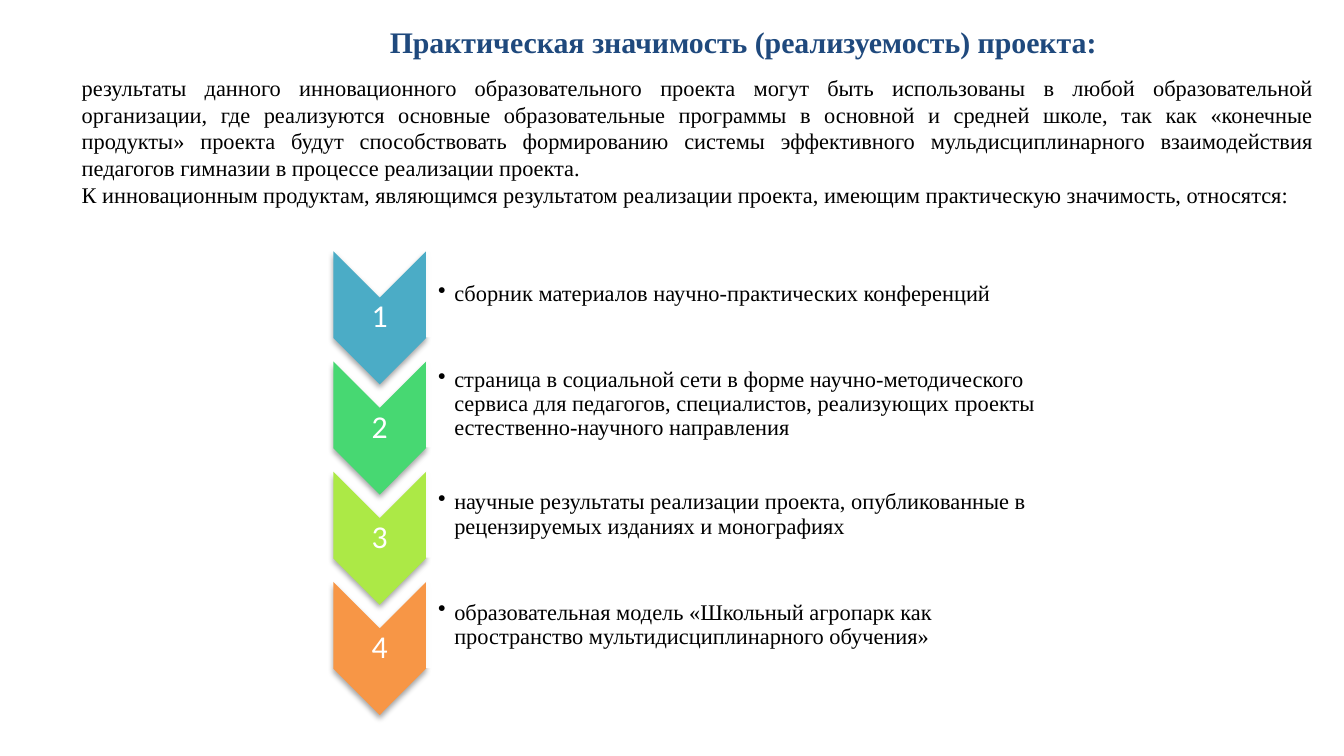
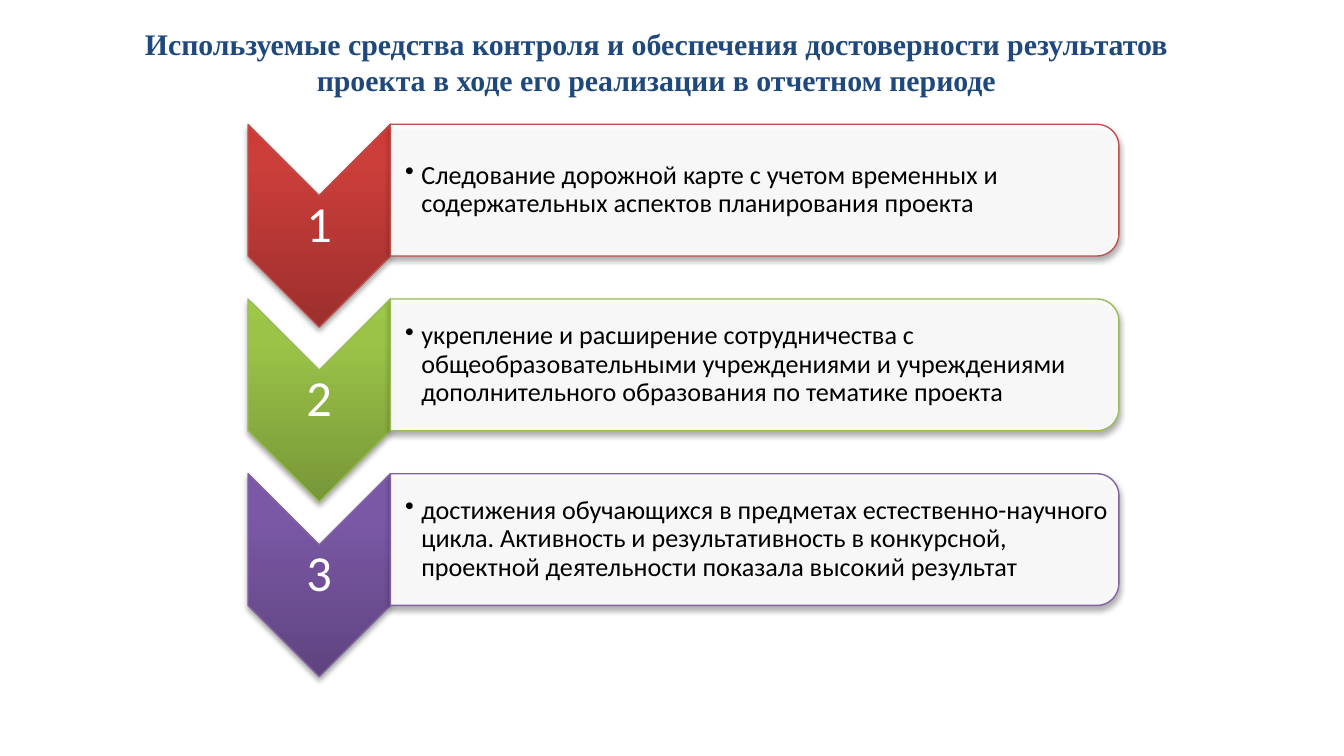
from dataclasses import dataclass
from typing import Any, NamedTuple, Optional

from lxml import etree
from pptx import Presentation
from pptx import util as u
from pptx.dml.color import RGBColor
from pptx.enum import shapes, text
from pptx.oxml.ns import qn

SLIDE_W, SLIDE_H = u.Inches(10), u.Inches(5.625)
CORNER_INSET = 0.0488
TITLE_ONLY = 5


@dataclass(frozen=True)
class Theme:
    """Colours, fonts and type sizes of the deck."""
    heading: str = "1F497D"
    ink: str = "000000"
    paper: str = "FFFFFF"
    serif: str = "Times New Roman"
    sans: str = "Calibri"
    title_size: float = 16
    gap_size: float = 18
    body_size: float = 12
    outline: float = 0.75
    panel_opacity: int = 90
    shadow_opacity: int = 35


THEME = Theme()


class Box(NamedTuple):
    """A frame in hundredths of the slide's width and height."""
    left: float
    top: float
    width: float
    height: float

    def emu(self) -> tuple[int, int, int, int]:
        """Return the frame in EMU."""
        return (int(self.left * SLIDE_W / 100), int(self.top * SLIDE_H / 100),
                int(self.width * SLIDE_W / 100), int(self.height * SLIDE_H / 100))


class Type(NamedTuple):
    """A character style."""
    name: str
    size: float
    color: str
    bold: bool = False


class Step(NamedTuple):
    """One numbered step; shades run from the bottom to the top of its arrow."""
    wording: str
    color: str
    shades: tuple[str, ...] = ()


@dataclass(frozen=True)
class Ladder:
    """Proportions and type of a column of numbered steps."""
    arrow: Box
    panel_width: float
    panel_height: float
    pitch: float
    number: Type
    label: Type
    number_inset: float
    label_inset: float
    outlined: bool


@dataclass(frozen=True)
class Page:
    """The content of one slide."""
    title_box: Box
    title: tuple[tuple[str, Type], ...]
    title_align: Any
    ladder: Ladder
    steps: tuple[Step, ...]
    intro_box: Optional[Box] = None
    intro: tuple[str, ...] = ()


HEADING = Type(THEME.serif, THEME.title_size, THEME.heading, True)
HEADING_GAP = Type(THEME.sans, THEME.gap_size, THEME.ink)
BODY = Type(THEME.serif, THEME.body_size, THEME.ink)

PAGES = (
    Page(
        Box(28, 1.78, 69.1, 7.11),
        (("Практическая", HEADING), (" ", HEADING_GAP),
         ("значимость (реализуемость) проекта:", HEADING)),
        text.PP_ALIGN.LEFT,
        Ladder(Box(24.8, 33.24, 6.9, 17.6), 47.4, 11.38, 14.58,
               Type(THEME.sans, 17, THEME.paper), BODY, 0.01, 0.09, False),
        (Step("сборник материалов научно-практических конференций", "4BACC6"),
         Step("страница в социальной сети в форме научно-методического сервиса для "
              "педагогов, специалистов, реализующих проекты естественно-научного "
              "направления", "47D872"),
         Step("научные результаты реализации проекта, опубликованные в рецензируемых "
              "изданиях и монографиях", "ACE946"),
         Step("образовательная модель «Школьный агропарк как пространство "
              "мультидисциплинарного обучения»", "F79646")),
        Box(5.1, 8.89, 93.7, 19.73),
        ("результаты данного инновационного образовательного проекта могут быть "
         "использованы в любой образовательной организации, где реализуются основные "
         "образовательные программы в основной и средней школе, так как «конечные "
         "продукты» проекта будут способствовать формированию системы эффективного "
         "мульдисциплинарного взаимодействия педагогов гимназии в процессе реализации "
         "проекта. ",
         "К инновационным продуктам, являющимся результатом реализации проекта, имеющим "
         "практическую значимость, относятся:"),
    ),
    Page(
        Box(6.7, 2.49, 84.3, 11.38),
        (("Используемые средства контроля и обеспечения достоверности результатов "
          "проекта в ходе его реализации в отчетном периоде", HEADING),),
        text.PP_ALIGN.CENTER,
        Ladder(Box(18.45, 16.44, 10.6, 26.84), 54.2, 17.42, 23.11,
               Type(THEME.sans, 27, THEME.paper), Type(THEME.sans, 14, THEME.ink),
               0.02, 0.11, True),
        (Step("Следование дорожной карте с учетом временных и содержательных аспектов "
              "планирования проекта", "C0504D", ("9C2F2D", "CB3E3A", "CE3B37")),
         Step("укрепление и расширение сотрудничества с общеобразовательными "
              "учреждениями и учреждениями дополнительного образования по тематике "
              "проекта", "9BBB59", ("779737", "9BC348", "9DC746")),
         Step("достижения обучающихся в предметах естественно-научного цикла. "
              "Активность и результативность в конкурсной, проектной деятельности "
              "показала высокий результат", "8064A2", ("5F4480", "7B58A6", "7C57A8"))),
    ),
)


def assign(target: Any, values: dict[str, Any]) -> None:
    """Set each attribute named in the values."""
    for key, value in values.items():
        setattr(target, key, value)


def child(parent: Any, tag: str, **attributes: Any) -> Any:
    """Append a DrawingML element."""
    return etree.SubElement(parent, qn(f"a:{tag}"),
                            {key: str(value) for key, value in attributes.items()})


def write(paragraph: Any, wording: str, style: Type) -> None:
    """Add a styled run."""
    run = paragraph.add_run()
    run.text = wording
    assign(run.font, {"name": style.name, "size": u.Pt(style.size), "bold": style.bold})
    run.font.color.rgb = RGBColor.from_string(style.color)


def set_frame(frame: Any, anchor: Any, insets: tuple[float, ...], auto_size: Any) -> None:
    """Format a text frame; insets run left, top, right, bottom."""
    sides = ("margin_left", "margin_top", "margin_right", "margin_bottom")
    assign(frame, {"word_wrap": True, "auto_size": auto_size, "vertical_anchor": anchor}
           | {side: u.Inches(inset) for side, inset in zip(sides, insets)})


def add_prose(frame: Any) -> None:
    """Give a frame the top-anchored format of titles and introductions."""
    set_frame(frame, text.MSO_ANCHOR.TOP, (0.1, 0.05, 0.1, 0.05),
              text.MSO_AUTO_SIZE.SHAPE_TO_FIT_TEXT)


def add_label(group: Any, box: Box, wording: str, style: Type,
              insets: tuple[float, ...]) -> Any:
    """Add a middle-anchored text and return its paragraph."""
    frame = group.shapes.add_textbox(*box.emu()).text_frame
    set_frame(frame, text.MSO_ANCHOR.MIDDLE, insets, text.MSO_AUTO_SIZE.NONE)
    paragraph = frame.paragraphs[0]
    paragraph.line_spacing = 0.9
    write(paragraph, wording, style)
    return paragraph


def add_turned(group: Any, kind: Any, box: Box, color: str) -> Any:
    """Add a filled shape turned a quarter so that it covers the box."""
    left, top, width, height = box.emu()
    shift = (width - height) // 2
    shape = group.shapes.add_shape(kind, left + shift, top - shift, height, width)
    shape.rotation = 90
    shape.fill.solid()
    shape.fill.fore_color.rgb = RGBColor.from_string(color)
    shape.line.fill.background()
    shape.shadow.inherit = False
    return shape


def add_outline(shape: Any, color: str) -> None:
    """Draw a thin coloured outline."""
    shape.line.color.rgb = RGBColor.from_string(color)
    shape.line.width = u.Pt(THEME.outline)


def add_shadow(shape: Any) -> None:
    """Cast a soft shadow downwards."""
    effects = shape._element.spPr.find(qn("a:effectLst"))
    shadow = child(effects, "outerShdw", blurRad=u.Pt(3.1), dist=u.Pt(1.8),
                   dir=90 * 60000, rotWithShape=0)
    color = child(shadow, "srgbClr", val=THEME.ink)
    child(color, "alpha", val=THEME.shadow_opacity * 1000)


def shade(shape: Any, shades: tuple[str, ...]) -> None:
    """Fill with a gradient that rises from the bottom of the slide."""
    shape.fill.gradient()
    shape.fill.gradient_angle = 90
    gradient = shape._element.spPr.find(qn("a:gradFill"))
    gradient.set("rotWithShape", "0")
    stops = gradient.find(qn("a:gsLst"))
    for stop in list(stops):
        stops.remove(stop)
    for position, color in zip((0, 80, 100), shades):
        child(child(stops, "gs", pos=position * 1000), "srgbClr", val=color)


def add_step(group: Any, ladder: Ladder, index: int, step: Step) -> None:
    """Draw one numbered arrow with its panel."""
    arrow = ladder.arrow._replace(top=ladder.arrow.top + index * ladder.pitch)
    chevron = add_turned(group, shapes.MSO_SHAPE.CHEVRON, arrow, step.color)
    if step.shades:
        shade(chevron, step.shades)
    add_shadow(chevron)

    point = arrow.width * SLIDE_W / SLIDE_H
    number_box = Box(arrow.left, arrow.top + point / 2, arrow.width, arrow.height - point)
    number = add_label(group, number_box, str(index + 1), ladder.number,
                       (ladder.number_inset,) * 4)
    number.alignment = text.PP_ALIGN.CENTER

    panel_box = Box(arrow.left + arrow.width, arrow.top,
                    ladder.panel_width, ladder.panel_height)
    panel = add_turned(group, shapes.MSO_SHAPE.ROUND_2_SAME_RECTANGLE, panel_box, THEME.paper)
    child(panel._element.spPr.find(qn("a:solidFill"))[0], "alpha",
          val=THEME.panel_opacity * 1000)
    if ladder.outlined:
        add_outline(chevron, step.color)
        add_outline(panel, step.color)
        add_shadow(panel)

    inset = CORNER_INSET * panel_box.height
    label_box = Box(panel_box.left, panel_box.top + inset,
                    panel_box.width - inset * SLIDE_H / SLIDE_W,
                    panel_box.height - 2 * inset)
    label = add_label(group, label_box, step.wording, ladder.label,
                      (ladder.label_inset, 0.01, 0.01, 0.01))
    label.level = 1
    properties = label._p.get_or_add_pPr()
    properties.set("marL", str(u.Inches(0.12)))
    properties.set("indent", str(u.Inches(-0.12)))
    child(properties, "buChar", char="•")


def add_page(deck: Any, page: Page) -> None:
    """Build one slide."""
    slide = deck.slides.add_slide(deck.slide_layouts[TITLE_ONLY])
    title = slide.shapes.title
    assign(title, dict(zip(("left", "top", "width", "height"), page.title_box.emu())))
    add_prose(title.text_frame)
    heading = title.text_frame.paragraphs[0]
    heading.alignment = page.title_align
    for wording, style in page.title:
        write(heading, wording, style)

    if page.intro_box:
        frame = slide.shapes.add_textbox(*page.intro_box.emu()).text_frame
        add_prose(frame)
        for index, wording in enumerate(page.intro):
            paragraph = frame.add_paragraph() if index else frame.paragraphs[0]
            paragraph.alignment = text.PP_ALIGN.JUSTIFY
            write(paragraph, wording, BODY)

    group = slide.shapes.add_group_shape()
    for index, step in enumerate(page.steps):
        add_step(group, page.ladder, index, step)


def main() -> None:
    """Build and save the deck."""
    deck = Presentation()
    assign(deck, {"slide_width": SLIDE_W, "slide_height": SLIDE_H})
    for page in PAGES:
        add_page(deck, page)
    deck.save("out.pptx")


if __name__ == "__main__":
    main()
